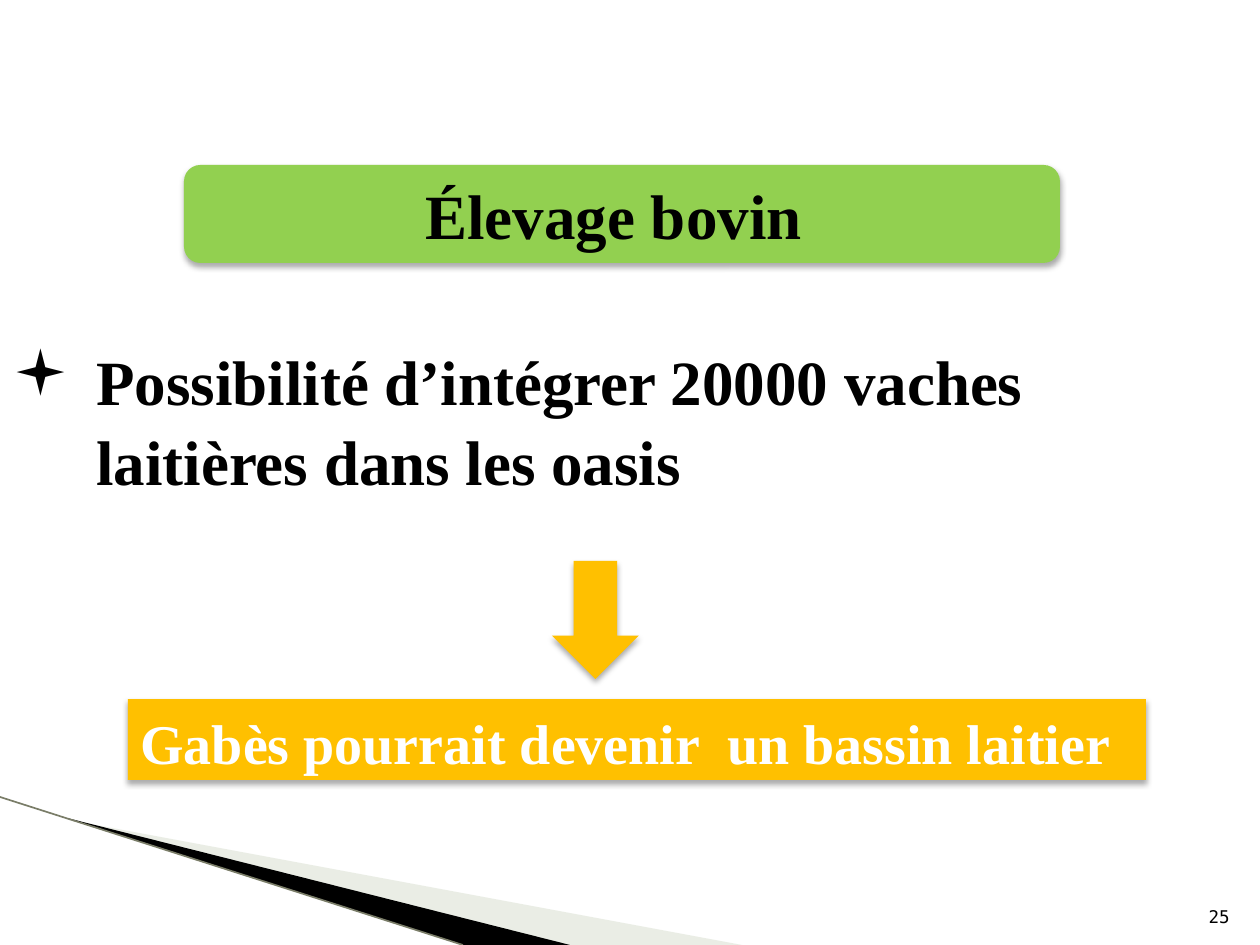
from lxml import etree
from pptx import Presentation
from pptx import util as u
from pptx.dml.color import RGBColor
from pptx.enum import shapes, text
from pptx.oxml import parse_xml
from pptx.oxml.ns import nsdecls, qn

SCALE = u.Inches(1) / 126
COLORS = {"green": "92D050", "gold": "FFC000", "black": "000000",
          "white": "FFFFFF", "mist": "CBD4C0", "edge": "7A7D68"}
SERIF = "Times New Roman"
SHADOW = (f'<a:effectLst {nsdecls("a")}><a:outerShdw blurRad="44450" dist="27940" '
          'dir="5400000" rotWithShape="0"><a:srgbClr val="000000">'
          '<a:alpha val="32000"/></a:srgbClr></a:outerShdw></a:effectLst>')


def px(*lengths):
    return [round(n * SCALE) for n in lengths]


def write(shape, words, color, font, frame_format, align, spacing=1.0):
    frame = shape.text_frame
    for key, value in {"word_wrap": True, **frame_format}.items():
        setattr(frame, key, value)
    line = frame.paragraphs[0]
    line.alignment = align
    line.line_spacing = spacing
    run = line.add_run()
    run.text = words
    for key, value in font.items():
        setattr(run.font, key, value)
    run.font.color.rgb = RGBColor.from_string(COLORS[color])
    return line


deck = Presentation()
deck.slide_width, deck.slide_height = px(1260, 945)
slide = deck.slides.add_slide(deck.slide_layouts[6])
items = slide.shapes

for color, alpha, points in [
    ("mist", 40, [(69, 820), (742, 945), (568, 945)]),
    ("black", 100, [(67, 818), (570, 945), (463, 945)]),
]:
    builder = items.build_freeform(*points[0], scale=SCALE)
    builder.add_line_segments(points[1:], close=True)
    wedge = builder.convert_to_shape()
    wedge.shadow.inherit = False
    wedge.fill.solid()
    wedge.fill.fore_color.rgb = RGBColor.from_string(COLORS[color])
    wedge.line.fill.background()
    tint = wedge.fill._xPr.find(f'{qn("a:solidFill")}/{qn("a:srgbClr")}')
    etree.SubElement(tint, qn("a:alpha"), val=str(alpha * 1000))

edge = items.add_connector(shapes.MSO_CONNECTOR.STRAIGHT, *px(0, 797, 463, 945))
edge.line.color.rgb = RGBColor.from_string(COLORS["edge"])
edge.line.width = u.Pt(0.95)
etree.SubElement(edge._element.spPr, qn("a:effectLst"))

panels = []
for kind, color, box in [
    ("ROUNDED_RECTANGLE", "green", (184, 165, 876, 98)),
    ("RECTANGLE", "gold", (128, 699, 1018, 81)),
    ("DOWN_ARROW", "gold", (552, 561, 87, 118)),
]:
    panel = items.add_shape(getattr(shapes.MSO_SHAPE, kind), *px(*box))
    panel.fill.solid()
    panel.fill.fore_color.rgb = RGBColor.from_string(COLORS[color])
    panel.line.fill.background()
    panel._element.spPr.append(parse_xml(SHADOW))
    panels.append(panel)
heading, conclusion, arrow = panels

write(heading, "Élevage bovin", "black",
      {"name": SERIF, "size": u.Pt(36), "bold": True},
      {"vertical_anchor": text.MSO_ANCHOR.MIDDLE, "margin_right": px(29)[0]},
      text.PP_ALIGN.CENTER)
write(conclusion, "Gabès pourrait devenir  un bassin laitier", "white",
      {"name": SERIF, "size": u.Pt(32), "bold": True},
      {"vertical_anchor": text.MSO_ANCHOR.TOP}, text.PP_ALIGN.LEFT, 1.05)

potential = items.add_textbox(*px(0, 333, 1260, 165))
point = write(potential, "Possibilité d’intégrer 20000 vaches laitières dans les oasis", "black",
              {"name": SERIF, "size": u.Pt(36), "bold": True},
              {"vertical_anchor": text.MSO_ANCHOR.TOP}, text.PP_ALIGN.LEFT, 1.05)
indent = px(84)[0]
layout = point._p.get_or_add_pPr()
layout.set("marL", str(indent))
layout.set("indent", str(-indent))
etree.SubElement(layout, qn("a:buFont"), typeface="Wingdings")
etree.SubElement(layout, qn("a:buChar"), char="▪")

page = items.add_textbox(*px(1192, 883, 50, 50))
write(page, "25", "black", {"name": "DejaVu Sans Mono", "size": u.Pt(10)},
      {"vertical_anchor": text.MSO_ANCHOR.BOTTOM}, text.PP_ALIGN.RIGHT)

deck.save("out.pptx")
